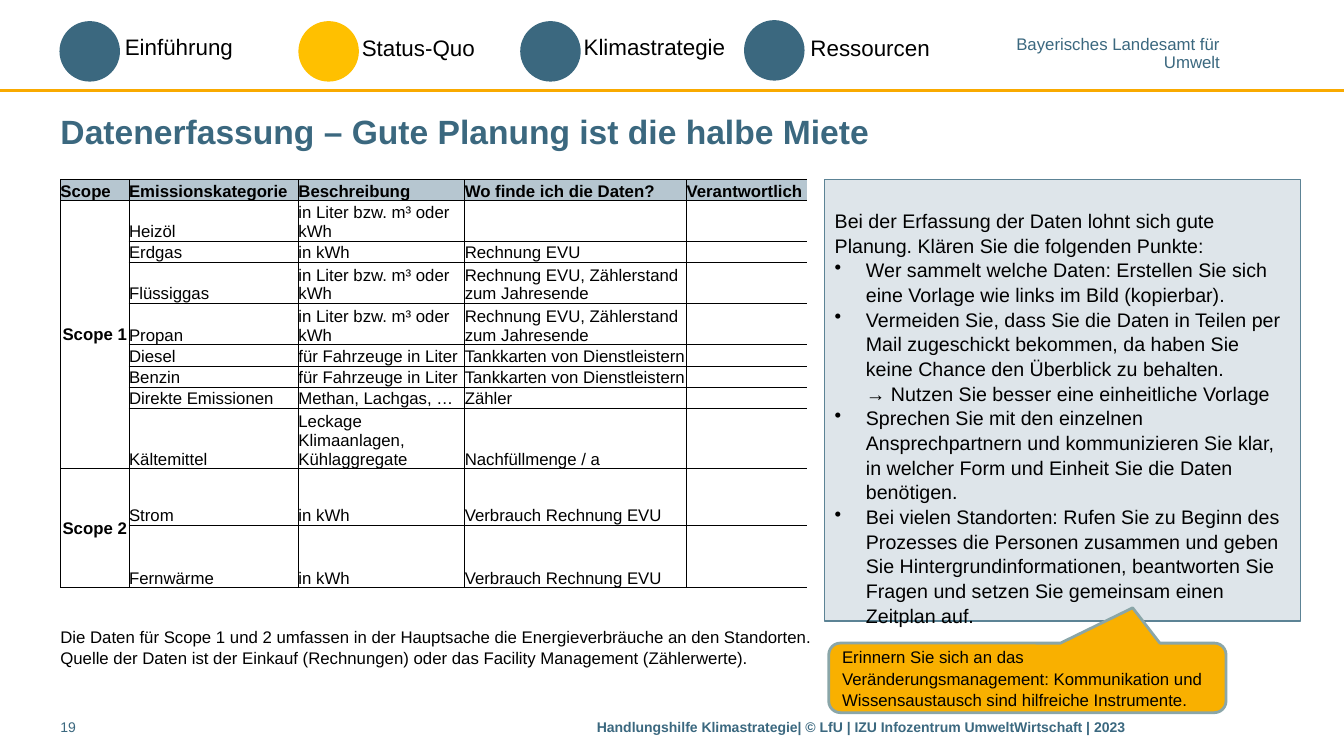
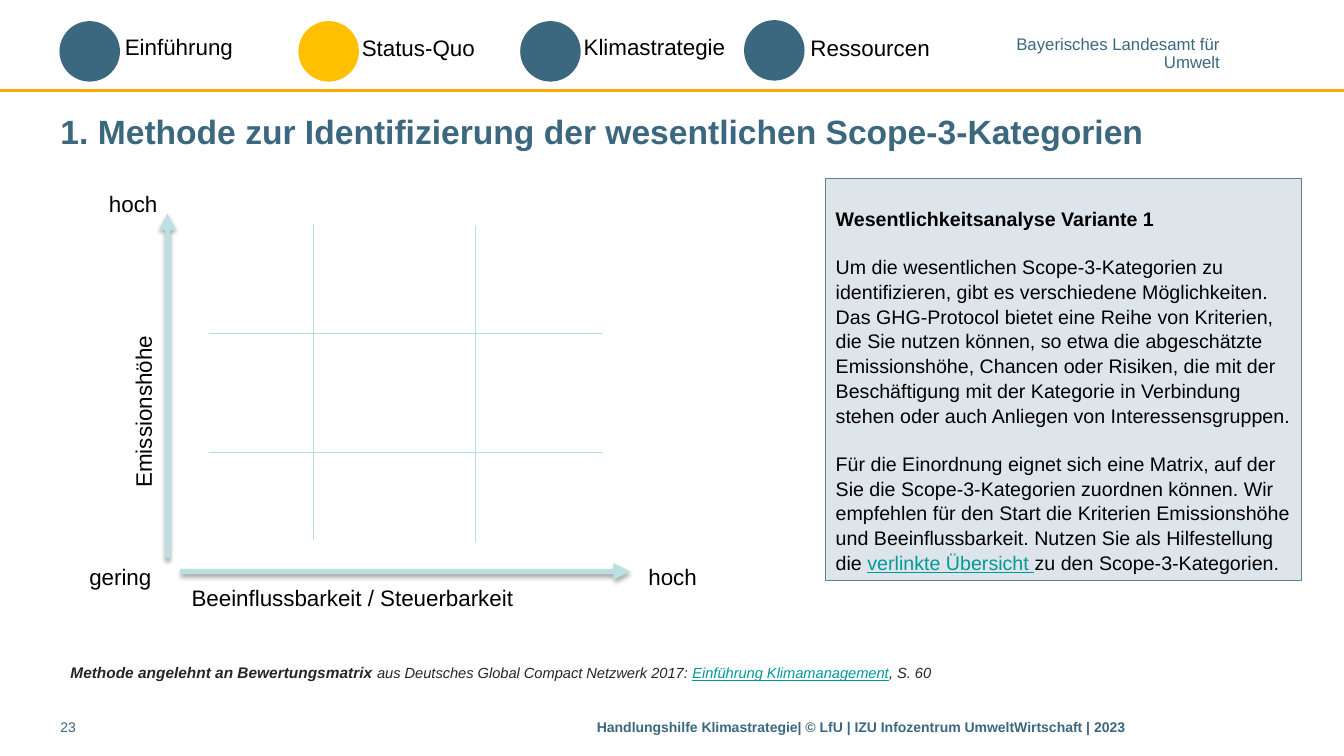
"""Build two slides on recording emission data and ranking Scope 3 categories."""
from lxml import etree
from pptx import Presentation
from pptx import util as u
from pptx.dml.color import RGBColor
from pptx.enum import shapes, text
from pptx.oxml.ns import qn

FONT = "Arial"
COLORS = {
    "blue": "3B687F", "active": "FFC000", "rule": "F9AA00", "text": "000000",
    "panel": "DEE5EA", "panel_line": "5C8395", "table_head": "B6C6D0",
    "callout": "F9B000", "callout_line": "8AA6A8", "link": "009999",
    "source": "262626", "axis": "BBE0E3", "grid": "B6DCDF",
}
LEFT, CENTER, RIGHT = text.PP_ALIGN.LEFT, text.PP_ALIGN.CENTER, text.PP_ALIGN.RIGHT
TOP, MIDDLE, BOTTOM = text.MSO_ANCHOR.TOP, text.MSO_ANCHOR.MIDDLE, text.MSO_ANCHOR.BOTTOM
INSETS = (0.1, 0.05, 0.1, 0.05)
FLUSH = (0, 0.05, 0, 0.05)
LINE_SPACING = 1.05
BOLD = {"bold": True}
LINK = {"color": "link", "underline": True}

CHAPTERS = [
    ("Einführung", 0.59, 0.21, 1.14, 0.28),
    ("Status-Quo", 2.96, 0.21, 3.49, 0.29),
    ("Klimastrategie", 5.16, 0.21, 5.69, 0.28),
    ("Ressourcen", 7.38, 0.2, 7.94, 0.29),
]
ACTIVE_CHAPTER = "Status-Quo"
FOOTER = "Handlungshilfe Klimastrategie| © LfU | IZU Infozentrum UmweltWirtschaft | 2023"

COLUMN_WIDTHS = [0.68, 1.68, 1.65, 2.2, 1.19]
ROW_HEIGHTS = [0.21, 0.37, 0.21, 0.41, 0.41, 0.21, 0.21, 0.21, 0.56, 0.56, 0.62]
EMISSIONS = [
    ("Scope", "Emissionskategorie", "Beschreibung", "Wo finde ich die Daten?", "Verantwortlich"),
    ("Scope 1", "Heizöl", "in Liter bzw. m³ oder kWh", "", ""),
    ("", "Erdgas", "in kWh", "Rechnung EVU", ""),
    ("", "Flüssiggas", "in Liter bzw. m³ oder kWh", "Rechnung EVU, Zählerstand zum Jahresende", ""),
    ("", "Propan", "in Liter bzw. m³ oder kWh", "Rechnung EVU, Zählerstand zum Jahresende", ""),
    ("", "Diesel", "für Fahrzeuge in Liter", "Tankkarten von Dienstleistern", ""),
    ("", "Benzin", "für Fahrzeuge in Liter", "Tankkarten von Dienstleistern", ""),
    ("", "Direkte Emissionen", "Methan, Lachgas, …", "Zähler", ""),
    ("", "Kältemittel", "Leckage Klimaanlagen, Kühlaggregate", "Nachfüllmenge / a", ""),
    ("Scope 2", "Strom", "in kWh", "Verbrauch Rechnung EVU", ""),
    ("", "Fernwärme", "in kWh", "Verbrauch Rechnung EVU", ""),
]
SCOPE_ROWS = [(1, 8), (9, 10)]

PLANNING_INTRO = "Bei der Erfassung der Daten lohnt sich gute Planung. Klären Sie die folgenden Punkte:"
PLANNING_POINTS = [
    "Wer sammelt welche Daten: Erstellen Sie sich eine Vorlage wie links im Bild (kopierbar).",
    "Vermeiden Sie, dass Sie die Daten in Teilen per Mail zugeschickt bekommen, da haben Sie "
    "keine Chance den Überblick zu behalten.\n→ Nutzen Sie besser eine einheitliche Vorlage",
    "Sprechen Sie mit den einzelnen Ansprechpartnern und kommunizieren Sie klar, in welcher "
    "Form und Einheit Sie die Daten benötigen.",
    "Bei vielen Standorten: Rufen Sie zu Beginn des Prozesses die Personen zusammen und geben "
    "Sie Hintergrundinformationen, beantworten Sie Fragen und setzen Sie gemeinsam einen "
    "Zeitplan auf.",
]
DATA_NOTE = (
    "Die Daten für Scope 1 und 2 umfassen in der Hauptsache die Energieverbräuche an den "
    "Standorten. Quelle der Daten ist der Einkauf (Rechnungen) oder das Facility Management "
    "(Zählerwerte)."
)
REMINDER = (
    "Erinnern Sie sich an das Veränderungsmanagement: Kommunikation und Wissensaustausch "
    "sind hilfreiche Instrumente."
)
ANALYSIS = [
    [("Wesentlichkeitsanalyse Variante 1", BOLD)],
    [("Um die wesentlichen Scope-3-Kategorien zu identifizieren, gibt es verschiedene "
      "Möglichkeiten. Das GHG-Protocol bietet eine Reihe von Kriterien, die Sie nutzen können, "
      "so etwa die abgeschätzte Emissionshöhe, Chancen oder Risiken, die mit der Beschäftigung "
      "mit der Kategorie in Verbindung stehen oder auch Anliegen von Interessensgruppen.", {})],
    [("Für die Einordnung eignet sich eine Matrix, auf der Sie die Scope-3-Kategorien zuordnen "
      "können. Wir empfehlen für den Start die Kriterien Emissionshöhe und Beeinflussbarkeit. "
      "Nutzen Sie als Hilfestellung die ", {}),
     ("verlinkte Übersicht ", LINK), ("zu den Scope-3-Kategorien.", {})],
]
SOURCE = [
    ("Methode angelehnt an Bewertungsmatrix ", {"bold": True, "size": 11}),
    ("aus Deutsches Global Compact Netzwerk 2017: ", {}),
    ("Einführung Klimamanagement", LINK),
    (", S. 60", {}),
]


def rgb(name):
    """Return the named colour."""
    return RGBColor.from_string(COLORS[name])


def inches(values):
    """Convert several numbers to lengths."""
    return [u.Inches(value) for value in values]


def add_span(para, words, size, color="text", bold=False, italic=False, underline=False):
    """Add one formatted run."""
    span = para.add_run()
    span.text = words
    font = span.font
    font.name, font.size, font.color.rgb = FONT, u.Pt(size), rgb(color)
    font.bold, font.italic, font.underline = bold, italic, underline


def add_bullet(para, indent=0.31):
    """Give a paragraph a hanging bullet."""
    properties = para._p.get_or_add_pPr()
    properties.set("marL", str(u.Inches(indent)))
    properties.set("indent", str(-u.Inches(indent)))
    etree.SubElement(properties, qn("a:buChar"), char="•")


def write(frame, paragraphs, size, align=LEFT, spacing=None, gap=0, bullets_from=None, **style):
    """Fill a text frame with paragraphs made of (words, style) spans."""
    for index, spans in enumerate(paragraphs):
        para = frame.add_paragraph() if index else frame.paragraphs[0]
        if bullets_from is not None and index >= bullets_from:
            add_bullet(para)
        para.alignment = align
        if spacing:
            para.line_spacing = spacing
        if index and gap:
            para.space_before = u.Pt(gap)
        for words, own_style in spans:
            for number, line in enumerate(words.split("\n")):
                if number:
                    para.add_line_break()
                add_span(para, line, **{"size": size, **style, **own_style})


def set_frame(frame, insets=INSETS, anchor=TOP, wrap=True):
    """Set margins, anchor and wrapping of a text frame."""
    frame.margin_left, frame.margin_top, frame.margin_right, frame.margin_bottom = inches(insets)
    frame.vertical_anchor, frame.word_wrap = anchor, wrap


def add_label(page, place, paragraphs, size, insets=INSETS, anchor=TOP, wrap=True, **style):
    """Add a text box; a plain string counts as one paragraph."""
    box = page.shapes.add_textbox(*inches(place))
    set_frame(box.text_frame, insets, anchor, wrap)
    if isinstance(paragraphs, str):
        paragraphs = [[(paragraphs, {})]]
    write(box.text_frame, paragraphs, size, **style)
    return box


def add_block(page, kind, place, fill, line=None, width=1):
    """Add a filled preset shape."""
    block = page.shapes.add_shape(kind, *inches(place))
    block.shadow.inherit = False
    block.fill.solid()
    block.fill.fore_color.rgb = rgb(fill)
    if line:
        block.line.color.rgb, block.line.width = rgb(line), u.Pt(width)
    else:
        block.line.fill.background()
    return block


def add_line(page, start, end, color, width, arrow=False):
    """Add a straight line, or an arrow with a soft shadow."""
    line = page.shapes.add_connector(shapes.MSO_CONNECTOR.STRAIGHT, *inches(start + end))
    line.line.color.rgb, line.line.width = rgb(color), u.Pt(width)
    effects = etree.SubElement(line._element.spPr, qn("a:effectLst"))
    if arrow:
        etree.SubElement(line.line._get_or_add_ln(), qn("a:tailEnd"), type="triangle")
        shadow = etree.SubElement(effects, qn("a:outerShdw"), blurRad="40000", dist="23000",
                                  dir="5400000", rotWithShape="0")
        tone = etree.SubElement(shadow, qn("a:srgbClr"), val=COLORS["text"])
        etree.SubElement(tone, qn("a:alpha"), val="35000")


def add_page(deck, title, number):
    """Add a slide with chapter bar, title and footer."""
    page = deck.slides.add_slide(deck.slide_layouts[6])
    add_line(page, (0, 0.9), (13.33, 0.9), "rule", 2)
    add_label(page, (10.07, 0.37, 2.03, 0.34),
              [[("Bayerisches Landesamt für", {})], [("Umwelt", {})]], 12,
              insets=(0, 0, 0, 0), wrap=False, align=RIGHT, spacing=0.85, color="blue")
    for name, dot_left, dot_top, left, top in CHAPTERS:
        fill = "active" if name == ACTIVE_CHAPTER else "blue"
        add_block(page, shapes.MSO_SHAPE.OVAL, (dot_left, dot_top, 0.6, 0.6), fill)
        add_label(page, (left, top, 1.75, 0.37), name, 16)
    add_label(page, (0.6, 1.02, 12.31, 0.55), title, 24, FLUSH, MIDDLE, color="blue", bold=True)
    add_label(page, (0.6, 7.08, 0.7, 0.31), str(number), 10, FLUSH, color="blue")
    add_label(page, (5.92, 7.08, 6.99, 0.31), FOOTER, 10, FLUSH, color="blue", bold=True)
    return page


def add_panel(page, place, paragraphs, top_inset, **layout):
    """Add the explanatory panel on the right."""
    panel = add_block(page, shapes.MSO_SHAPE.RECTANGLE, place, "panel", "panel_line")
    set_frame(panel.text_frame, (0.1, top_inset, 0.1, 0.05))
    write(panel.text_frame, paragraphs, 14, spacing=LINE_SPACING, **layout)


def add_borders(cell, sides):
    """Draw thin black borders on the given sides and clear the others."""
    properties = cell._tc.get_or_add_tcPr()
    for side in "LRTB":
        line = etree.SubElement(properties, qn(f"a:ln{side}"), w=str(u.Pt(0.5)))
        if side in sides:
            fill = etree.SubElement(line, qn("a:solidFill"))
            etree.SubElement(fill, qn("a:srgbClr"), val=COLORS["text"])
        else:
            etree.SubElement(line, qn("a:noFill"))


def add_emission_table(page, left, top):
    """Add the table of emission categories by scope."""
    place = inches((left, top, sum(COLUMN_WIDTHS), sum(ROW_HEIGHTS)))
    table = page.shapes.add_table(len(EMISSIONS), len(COLUMN_WIDTHS), *place).table
    table.first_row = table.horz_banding = False
    for column, width in zip(table.columns, COLUMN_WIDTHS):
        column.width = u.Inches(width)
    for row, height in zip(table.rows, ROW_HEIGHTS):
        row.height = u.Inches(height)
    for first, last in SCOPE_ROWS:
        table.cell(first, 0).merge(table.cell(last, 0))
    for row, values in enumerate(EMISSIONS):
        for column, words in enumerate(values):
            cell = table.cell(row, column)
            is_head, is_scope = row == 0, row > 0 and column == 0
            cell.margin_left = cell.margin_right = cell.margin_top = cell.margin_bottom = 0
            cell.vertical_anchor = MIDDLE if is_scope else BOTTOM
            add_borders(cell, "LTB" if column == len(values) - 1 else "LRTB")
            if is_head:
                cell.fill.solid()
                cell.fill.fore_color.rgb = rgb("table_head")
            else:
                cell.fill.background()
            if words:
                write(cell.text_frame, [[(words, {})]], 12, CENTER if is_scope else LEFT,
                      bold=is_head or is_scope)
            else:
                para = cell.text_frame.paragraphs[0]
                etree.SubElement(para._p, qn("a:endParaRPr"), sz="1200")


def add_reminder(page, place):
    """Add the speech bubble pointing up at the panel."""
    bubble = add_block(page, shapes.MSO_SHAPE.ROUNDED_RECTANGULAR_CALLOUT, place,
                       "callout", "callout_line", 2)
    for index, value in enumerate((0.265, -1.007, 0.167)):
        bubble.adjustments[index] = value
    set_frame(bubble.text_frame, anchor=MIDDLE)
    write(bubble.text_frame, [[(REMINDER, {})]], 12, spacing=LINE_SPACING)


def add_matrix(page, left, top):
    """Add the empty matrix of emission level against influence."""
    def at(x, y):
        return left + x, top + y

    add_line(page, at(1.06, 3.7), at(1.06, 0.28), "axis", 4, arrow=True)
    add_line(page, at(1.19, 3.83), at(5.65, 3.83), "axis", 4, arrow=True)
    for x, y in ((2.51, 0.38), (4.12, 0.4)):
        add_line(page, at(x, y), at(x, y + 3.14), "grid", 0.75)
    for y in (1.47, 2.65):
        add_line(page, at(1.47, y), at(5.37, y), "grid", 0.75)
    for words, x, y, width in (("gering", 0, 3.7, 1), ("hoch", 5.58, 3.7, 0.83),
                               ("hoch", 0.23, 0, 0.83),
                               ("Beeinflussbarkeit / Steuerbarkeit", 0.83, 3.91, 3.76)):
        add_label(page, at(x, y) + (width, 0.37), words, 16, align=RIGHT)
    level = add_label(page, at(-0.11, 2.14) + (1.87, 0.38), "Emissionshöhe", 16, align=RIGHT)
    level.rotation = 270


def build_data_page(deck):
    """Build the slide on planning the data collection."""
    page = add_page(deck, "Datenerfassung – Gute Planung ist die halbe Miete", 19)
    points = [[(words, {})] for words in [PLANNING_INTRO] + PLANNING_POINTS]
    add_panel(page, (8.18, 1.78, 4.72, 4.38), points, 0.28, bullets_from=1)
    add_emission_table(page, 0.6, 1.78)
    add_label(page, (0.5, 6.16, 7.72, 0.5), DATA_NOTE, 12, spacing=LINE_SPACING)
    add_reminder(page, (8.22, 6.38, 3.94, 0.69))


def build_matrix_page(deck):
    """Build the slide on ranking Scope 3 categories."""
    page = add_page(deck, "1. Methode zur Identifizierung der wesentlichen Scope-3-Kategorien", 23)
    add_panel(page, (8.19, 1.77, 4.72, 3.99), ANALYSIS, 0.27, gap=17)
    add_label(page, (0.6, 6.53, 8.98, 0.4), [SOURCE], 10.5, color="source", italic=True)
    add_matrix(page, 0.6, 1.84)


def main():
    """Create and save the deck."""
    deck = Presentation()
    deck.slide_width, deck.slide_height = inches((13.33, 7.5))
    build_data_page(deck)
    build_matrix_page(deck)
    deck.save("out.pptx")


if __name__ == "__main__":
    main()
